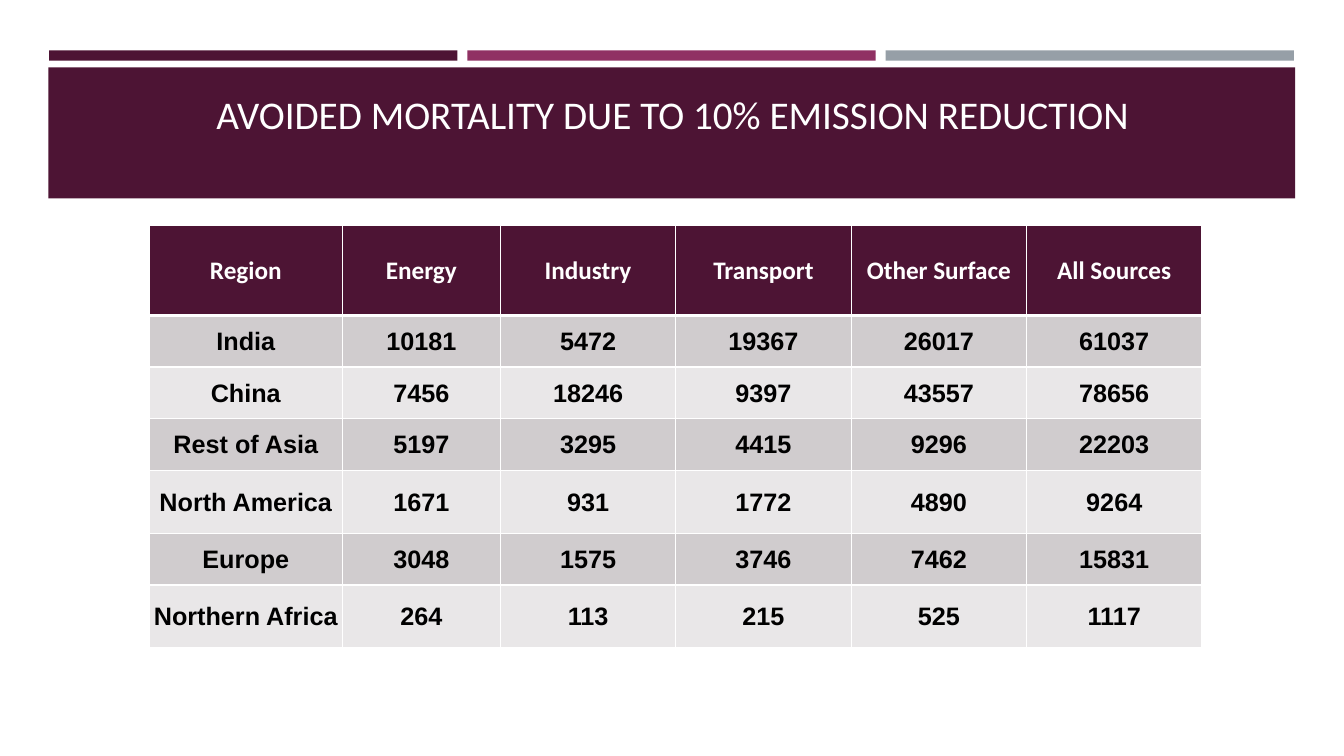
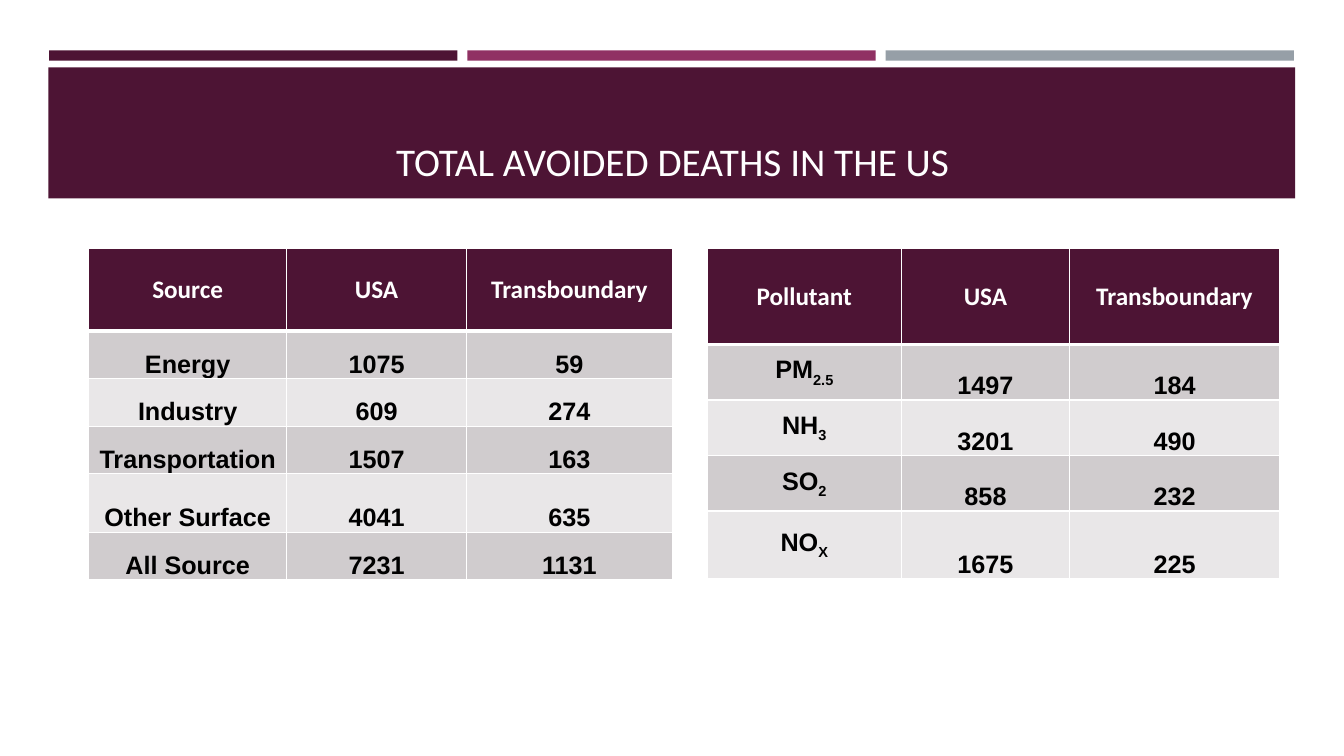
import lxml.etree
import pptx
import pptx.dml.color
import pptx.enum.shapes
import pptx.enum.text
import pptx.oxml.ns
import pptx.util

Cm, Pt = pptx.util.Cm, pptx.util.Pt
ANCHOR = pptx.enum.text.MSO_ANCHOR

PLUM, MAGENTA, GREY = "4D1434", "903163", "969FA7"
WHITE, BLACK = "FFFFFF", "000000"
STRIPES = ["D0CCCE", "E9E7E8"]
HEAD_FONT, BODY_FONT = "Calibri", "Arial"

BAR_LEFT, BAR_TOP, BAR_WIDTH, BAR_HEIGHT, BAR_PITCH = 1.24, 1.27, 10.29, 0.26, 10.54
BAND = (1.22, 1.7, 31.42, 3.3)
TITLE = (1.63, 1.96, 30.63, 2.82)

SLIDES = [
    {
        "title": "AVOIDED MORTALITY DUE TO 10% EMISSION REDUCTION",
        "title_gap": 1.32,
        "tables": [
            {
                "at": (3.76, 5.69),
                "cols": [4.87, 3.98, 4.42, 4.42, 4.42, 4.42],
                "rows": [2.26, 1.3, 1.3, 1.3, 1.59, 1.3, 1.59],
                "anchor": ANCHOR.MIDDLE,
                "cells": [
                    ["Region", "Energy", "Industry", "Transport", "Other Surface", "All Sources"],
                    ["India", 10181, 5472, 19367, 26017, 61037],
                    ["China", 7456, 18246, 9397, 43557, 78656],
                    ["Rest of Asia", 5197, 3295, 4415, 9296, 22203],
                    ["North America", 1671, 931, 1772, 4890, 9264],
                    ["Europe", 3048, 1575, 3746, 7462, 15831],
                    ["Northern Africa", 264, 113, 215, 525, 1117],
                ],
            },
        ],
    },
    {
        "title": "TOTAL AVOIDED DEATHS IN THE US",
        "title_gap": 0.13,
        "tables": [
            {
                "at": (2.24, 6.27),
                "cols": [4.98, 4.54, 5.18],
                "rows": [2.07, 1.2, 1.2, 1.2, 1.47, 1.2],
                "anchor": ANCHOR.BOTTOM,
                "cells": [
                    ["Source", "USA", "Transboundary"],
                    ["Energy", 1075, 59],
                    ["Industry", 609, 274],
                    ["Transportation", 1507, 163],
                    ["Other Surface", 4041, 635],
                    ["All Source", 7231, 1131],
                ],
            },
            {
                "at": (17.83, 6.27),
                "cols": [4.88, 4.25, 5.28],
                "rows": [2.41, 1.4, 1.4, 1.4, 1.7],
                "anchor": ANCHOR.BOTTOM,
                "cells": [
                    ["Pollutant", "USA", "Transboundary"],
                    [("PM", "2.5"), 1497, 184],
                    [("NH", "3"), 3201, 490],
                    [("SO", "2"), 858, 232],
                    [("NO", "X"), 1675, 225],
                ],
            },
        ],
    },
]


def rgb(color):
    return pptx.dml.color.RGBColor.from_string(color)


def style(p, font, size, color, bold=False):
    p.alignment = pptx.enum.text.PP_ALIGN.CENTER
    p.font.name = font
    p.font.size = Pt(size)
    p.font.bold = bold
    p.font.color.rgb = rgb(color)


def add_rect(s, left, top, width, height, color):
    sp = s.shapes.add_shape(pptx.enum.shapes.MSO_SHAPE.RECTANGLE,
                            Cm(left), Cm(top), Cm(width), Cm(height))
    sp.shadow.inherit = False
    sp.fill.solid()
    sp.fill.fore_color.rgb = rgb(color)
    sp.line.fill.background()


def add_header(s, title, gap):
    for i, color in enumerate([PLUM, MAGENTA, GREY]):
        add_rect(s, BAR_LEFT + i * BAR_PITCH, BAR_TOP, BAR_WIDTH, BAR_HEIGHT, color)
    add_rect(s, *BAND, PLUM)
    tf = s.shapes.add_textbox(*map(Cm, TITLE)).text_frame
    tf.word_wrap = True
    tf.vertical_anchor = ANCHOR.BOTTOM
    tf.margin_bottom = Cm(gap)
    p = tf.paragraphs[0]
    p.text = title
    style(p, HEAD_FONT, 28, WHITE)


def add_borders(cell, top, bottom):
    tcPr = cell._tc.get_or_add_tcPr()
    qn = pptx.oxml.ns.qn
    for side, width in [("L", 1), ("R", 1), ("T", top), ("B", bottom)]:
        ln = lxml.etree.SubElement(tcPr, qn("a:ln" + side), w=str(Pt(width)))
        fill = lxml.etree.SubElement(ln, qn("a:solidFill"))
        lxml.etree.SubElement(fill, qn("a:srgbClr"), val=WHITE)


def fill_cell(cell, value, row, anchor):
    add_borders(cell, 3 if row == 1 else 1, 3 if row == 0 else 1)
    cell.fill.solid()
    cell.fill.fore_color.rgb = rgb(STRIPES[(row - 1) % 2] if row else PLUM)
    p = cell.text_frame.paragraphs[0]
    formula = isinstance(value, tuple)
    if formula:
        base, subscript = value
        p.add_run().text = base
        r = p.add_run()
        r.text = subscript
        r.font._element.set("baseline", "-25000")
    else:
        p.text = str(value)
    style(p, BODY_FONT if row else HEAD_FONT, 18, BLACK if row else WHITE, True)
    if row == 0 or formula:
        cell.vertical_anchor = ANCHOR.MIDDLE
    else:
        cell.vertical_anchor = anchor
        cell.margin_left = cell.margin_right = cell.margin_top = Cm(0.03)
        cell.margin_bottom = 0


def add_table(s, data):
    cols, rows = data["cols"], data["rows"]
    table = s.shapes.add_table(len(rows), len(cols), *map(Cm, data["at"]),
                               Cm(sum(cols)), Cm(sum(rows))).table
    for column, width in zip(table.columns, cols):
        column.width = Cm(width)
    for i, (height, values) in enumerate(zip(rows, data["cells"])):
        table.rows[i].height = Cm(height)
        for j, value in enumerate(values):
            fill_cell(table.cell(i, j), value, i, data["anchor"])


def main():
    prs = pptx.Presentation()
    prs.slide_width, prs.slide_height = Cm(33.87), Cm(19.05)
    for content in SLIDES:
        s = prs.slides.add_slide(prs.slide_layouts[6])
        add_header(s, content["title"], content["title_gap"])
        for data in content["tables"]:
            add_table(s, data)
    prs.save("out.pptx")


if __name__ == "__main__":
    main()
